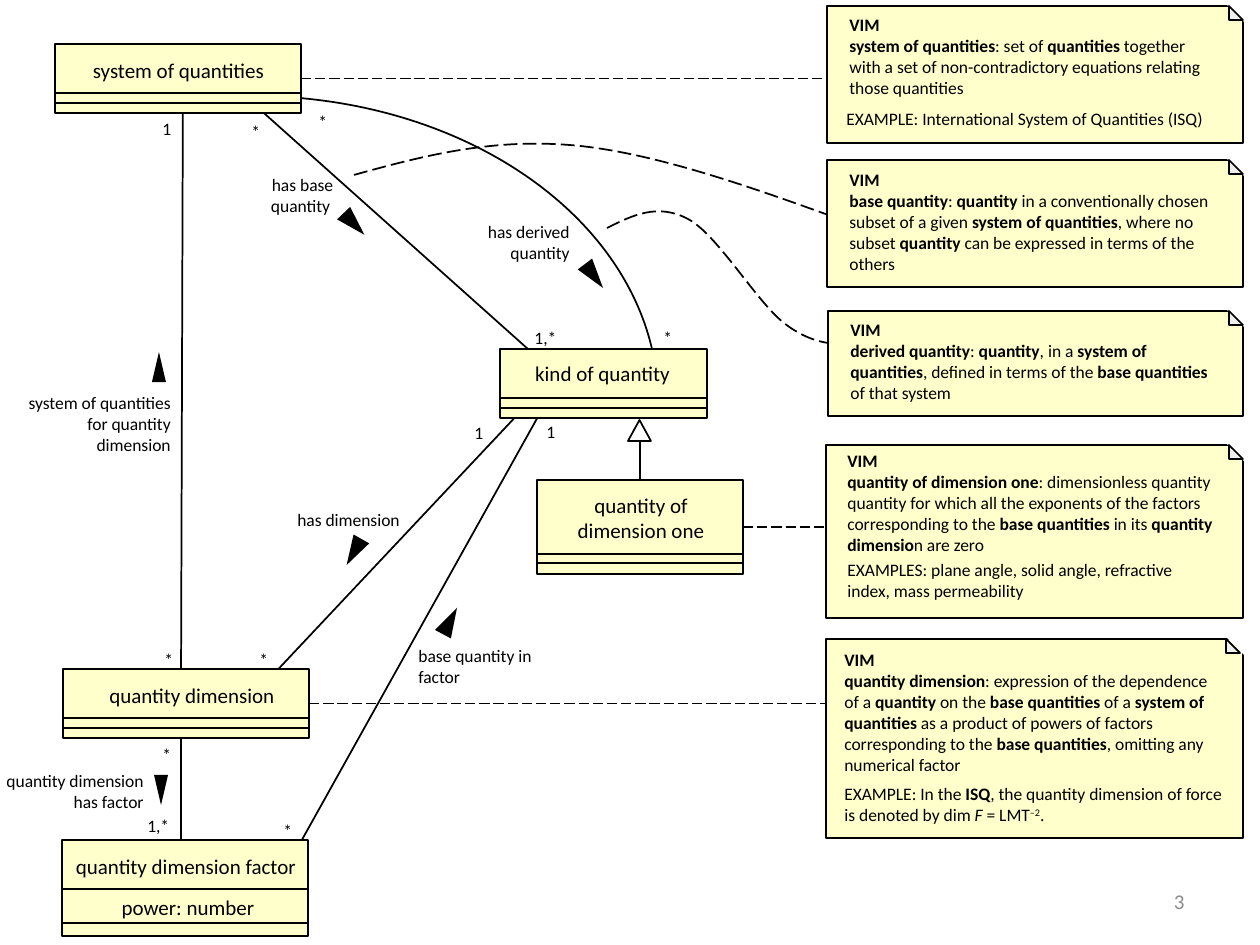
from dataclasses import dataclass

import lxml.etree
import pptx
import pptx.dml.color
import pptx.enum.dml
import pptx.enum.shapes
import pptx.enum.text
import pptx.oxml.ns
import pptx.util

SCALE = 914400 / 126  # EMU per px
SHAPES = pptx.enum.shapes.MSO_SHAPE
LEFT, CENTER, RIGHT = (pptx.enum.text.PP_ALIGN[n] for n in ("LEFT", "CENTER", "RIGHT"))
BLACK, WHITE, YELLOW, FOLD, GREY = "000000", "FFFFFF", "FFFFCC", "EFEFED", "8C8C8C"
# A text piece may open with one of these style marks; pieces are parted by "|"
STYLES = {"b:": {"bold": True}, "i:": {"italic": True}, "s:": {}}


@dataclass
class ClassBox:
    title: str
    frame: tuple[int, int, int, int]
    title_frame: tuple[int, int, int, int]  # relative to the box
    dividers: tuple[int, int] = (49, 59)
    wrap: bool = False


@dataclass
class Note:
    frame: tuple[int, int, int, int]
    body_frame: tuple[int, int, int, int]
    body: list[str]
    fold_x: int = 1229
    example_frame: tuple[int, int, int, int] | None = None
    example: tuple[str, ...] = ()


@dataclass
class Label:
    text: str
    x: int
    y: int
    width: int = 38
    height: int = 34
    align: int = LEFT


def px(value: float) -> pptx.util.Emu:
    return pptx.util.Emu(round(value * SCALE))


def rgb(color: str) -> pptx.dml.color.RGBColor:
    return pptx.dml.color.RGBColor.from_string(color)


def set_all(target, values: dict) -> None:
    for name, value in values.items():
        setattr(target, name, value)


def set_line(line, width: float = 1, dashed: bool = False) -> None:
    line.color.rgb = rgb(BLACK)
    line.width = pptx.util.Pt(width)
    if dashed:
        line.dash_style = pptx.enum.dml.MSO_LINE.LONG_DASH


def add_form(slide, kind, frame, fill=None, outlined=True, rotation=0, adjust=()):
    form = slide.shapes.add_shape(kind, *map(px, frame))
    form.shadow.inherit = False
    form.rotation = rotation
    for i, value in enumerate(adjust):
        form.adjustments[i] = value
    if fill:
        form.fill.solid()
        form.fill.fore_color.rgb = rgb(fill)
    else:
        form.fill.background()
    if outlined:
        set_line(form.line)
    else:
        form.line.fill.background()
    return form


def add_line(slide, x1, y1, x2, y2, width: float = 1, dashed: bool = False):
    link = slide.shapes.add_connector(
        pptx.enum.shapes.MSO_CONNECTOR.STRAIGHT, *map(px, (x1, y1, x2, y2)))
    set_line(link.line, width, dashed)
    lxml.etree.SubElement(link._element.spPr, pptx.oxml.ns.qn("a:effectLst"))
    return link


def add_curve(slide, points: list[tuple[int, int]]) -> None:
    """Dashed Bézier curve: a start, then three points for each segment."""
    builder = slide.shapes.build_freeform(*points[0], scale=SCALE)
    builder.add_line_segments(points[1:], close=False)
    curve = builder.convert_to_shape()
    curve.shadow.inherit = False
    curve.fill.background()
    set_line(curve.line, dashed=True)
    steps = curve._element.xpath(".//a:lnTo")
    outline = steps[0].getparent()
    for start in range(0, len(steps), 3):
        bezier = lxml.etree.SubElement(outline, pptx.oxml.ns.qn("a:cubicBezTo"))
        for step in steps[start:start + 3]:
            bezier.append(step[0])
            outline.remove(step)


def add_text(slide, frame, paragraphs, size=10, align=LEFT, wrap=True, color=BLACK):
    frame_text = slide.shapes.add_textbox(*map(px, frame)).text_frame
    set_all(frame_text, {"word_wrap": wrap,
                         "auto_size": pptx.enum.text.MSO_AUTO_SIZE.SHAPE_TO_FIT_TEXT})
    for i, text in enumerate(paragraphs):
        paragraph = frame_text.add_paragraph() if i else frame_text.paragraphs[0]
        paragraph.alignment = align
        for piece in text.split("|"):
            mark = piece[:2] if piece[:2] in STYLES else ""
            run = paragraph.add_run()
            run.text = piece[len(mark):]
            set_all(run.font, {"name": "Calibri", "size": pptx.util.Pt(size),
                               **STYLES.get(mark, {})})
            run.font.color.rgb = rgb(color)
            if mark == "s:":
                run.font._element.set("baseline", "30000")
    return frame_text


def add_class_box(slide, box: ClassBox):
    x, y, width, height = box.frame
    body = add_form(slide, SHAPES.RECTANGLE, box.frame, YELLOW)
    for offset in box.dividers:
        add_line(slide, x, y + offset, x + width, y + offset)
    dx, dy, *extent = box.title_frame
    add_text(slide, (x + dx, y + dy, *extent), [box.title], 12, CENTER, box.wrap)
    return body


def add_note(slide, note: Note) -> None:
    top = note.frame[1]
    add_form(slide, SHAPES.SNIP_1_RECTANGLE, note.frame, YELLOW, adjust=(0,))
    add_form(slide, SHAPES.RIGHT_TRIANGLE, (1222, top - 6, 25, 25), WHITE, False, 180)
    add_form(slide, SHAPES.RIGHT_TRIANGLE, (note.fold_x, top, 14, 14), FOLD)
    add_text(slide, note.body_frame, ["b:VIM", *note.body])
    if note.example_frame:
        add_text(slide, note.example_frame, note.example)


SYSTEM = ClassBox("system of quantities", (55, 44, 246, 69), (24, 7, 199, 38))
KIND = ClassBox("kind of quantity", (500, 349, 207, 69), (22, 5, 161, 38))
DIMENSION_ONE = ClassBox("quantity of dimension one", (537, 480, 206, 94),
                         (9, 6, 190, 64), (74, 83), True)
DIMENSION = ClassBox("quantity dimension", (63, 669, 246, 69), (33, 7, 192, 38))
FACTOR = ClassBox("quantity dimension factor", (62, 840, 246, 96), (0, 7, 248, 38), (49, 83))

NOTES = [
    Note((827, 6, 416, 137), (837, 8, 393, 97),
         ["b:system of quantities|: set of |b:quantities |together with a set of "
          "non-contradictory equations relating those quantities"],
         example_frame=(834, 102, 418, 34),
         example=("EXAMPLE: International System of Quantities (ISQ)",)),
    Note((827, 160, 416, 127), (837, 163, 394, 118),
         ["b:base quantity|: |b:quantity| in a conventionally chosen subset of a given "
          "|b:system of quantities|, where no subset |b:quantity| can be expressed in "
          "terms of the others"]),
    Note((828, 311, 415, 105), (838, 313, 394, 97),
         ["b:derived quantity|: |b:quantity|, in a |b:system of quantities|, defined in "
          "terms of the |b:base quantities |of that system"]),
    Note((826, 445, 417, 173), (835, 444, 418, 118),
         ["b:quantity of dimension one|: dimensionless quantity",
          "quantity for which all the exponents of the factors",
          "corresponding to the |b:base quantities |in its |b:quantity",
          "b:dimensio|n are zero"],
         example_frame=(835, 553, 378, 55),
         example=("EXAMPLES: plane angle, solid angle, refractive index, mass permeability",)),
    Note((826, 639, 417, 199), (832, 643, 401, 140),
         ["b:quantity dimension|: expression of the dependence of a |b:quantity| on the "
          "|b:base quantities| of a |b:system of quantities| as a product of powers of "
          "factors corresponding to the |b:base quantities|, omitting any numerical factor"],
         1226, (832, 777, 406, 55),
         ("EXAMPLE: In the |b:ISQ|, the quantity dimension of force",
          "is denoted by dim |i:F |= LMT|s:–2|.")),
]

LABELS = [
    # Multiplicities
    Label("1", 150, 112), Label("*", 239, 115), Label("*", 306, 105),
    Label("1,*", 522, 321, 84), Label("*", 651, 321), Label("1", 462, 416),
    Label("1", 534, 415), Label("*", 152, 643), Label("*", 247, 643),
    Label("*", 150, 738), Label("1,*", 135, 809, 76), Label("*", 271, 814),
    # Association names
    Label("has base quantity ", 239, 168, 127, 55, CENTER),
    Label("has derived quantity", 455, 215, 127, 55, RIGHT),
    Label("system of quantities for quantity dimension", 0, 386, 183, 77, RIGHT),
    Label("has dimension", 266, 503, 146, 34, RIGHT),
    Label("base quantity in factor", 406, 639, 146, 55),
    Label("quantity dimension has factor", -23, 764, 179, 55, RIGHT),
]

# Reading-direction marks: left, top, width, rotation
MARKS = [(152, 352, 14, 0), (154, 775, 14, 180), (345, 537, 18, 209.5),
         (441, 606, 18, 28.1), (345, 209, 18, 136.3), (585, 261, 18, 143)]

ASSOCIATIONS = [(566, 383, 256, 106), (183, 64, 181, 697), (181, 697, 181, 905),
                (284, 872, 544, 406), (270, 678, 522, 410)]


def main() -> None:
    deck = pptx.Presentation()
    deck.slide_width, deck.slide_height = px(1260), px(945)
    slide = deck.slides.add_slide(deck.slide_layouts[6])

    # Curves and associations, running behind the boxes
    add_curve(slide, [(607, 228), (633, 215), (658, 203), (688, 219), (717, 234),
                      (756, 301), (784, 323), (811, 344), (832, 344), (852, 345)])
    add_curve(slide, [(354, 175), (423, 156), (494, 137), (580, 146), (664, 155),
                      (765, 192), (864, 228)])
    add_form(slide, SHAPES.ARC, (-152, 96, 810, 611), adjust=(162.1, 0))
    for ends in ASSOCIATIONS:
        add_line(slide, *ends)

    # Class boxes
    add_class_box(slide, KIND)
    add_class_box(slide, FACTOR)
    add_text(slide, (108, 888, 160, 38), ["power: number"], 12, CENTER, False)

    # Boxes tied to a note on the right
    for box in (SYSTEM, DIMENSION, DIMENSION_ONE):
        body = add_class_box(slide, box)
        x, y, width, height = box.frame
        middle = y + height / 2
        tie = add_line(slide, x + width, middle, 830, middle, 0.75, True)
        tie.begin_connect(body, 3)

    # Generalization from dimension one (the last box) to kind of quantity
    generalization = add_line(slide, 640, 480, 640, 431)
    generalization.begin_connect(body, 0)
    add_form(slide, SHAPES.ISOSCELES_TRIANGLE, (628, 420, 23, 21), WHITE)

    # Notes, labels and direction marks
    for note in NOTES:
        add_note(slide, note)
    for label in LABELS:
        add_text(slide, (label.x, label.y, label.width, label.height), [label.text],
                 align=label.align)
    for x, y, width, rotation in MARKS:
        add_form(slide, SHAPES.ISOSCELES_TRIANGLE, (x, y, width, 30), BLACK, False, rotation)

    # Page number
    number = add_text(slide, (903, 876, 294, 50), ["3"], 12, RIGHT, color=GREY)
    set_all(number, {"auto_size": pptx.enum.text.MSO_AUTO_SIZE.NONE,
                     "vertical_anchor": pptx.enum.text.MSO_ANCHOR.MIDDLE})
    deck.save("out.pptx")


if __name__ == "__main__":
    main()
